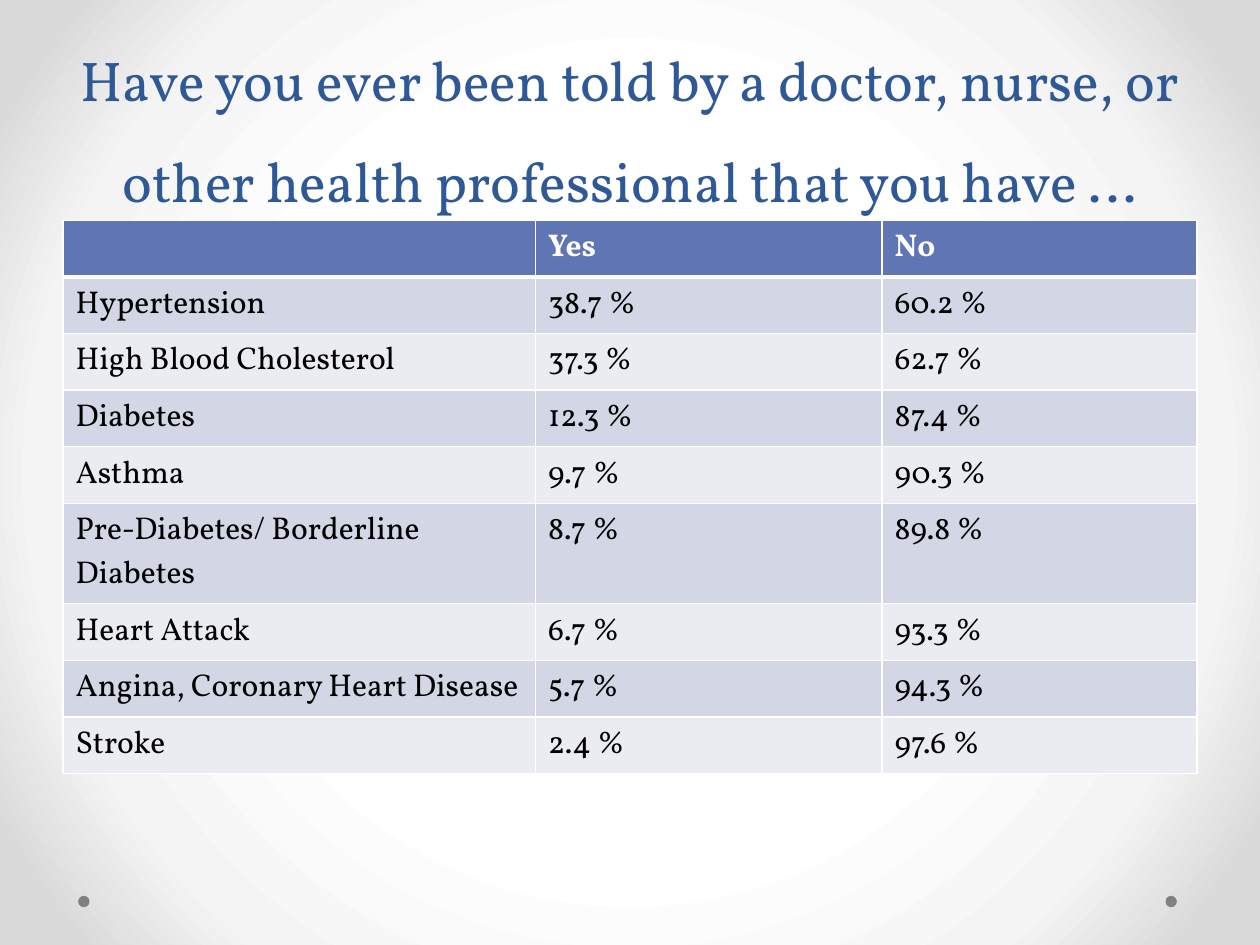
from pptx import Presentation
from pptx.dml.color import RGBColor
from pptx.enum.shapes import MSO_SHAPE
from pptx.enum.text import MSO_ANCHOR, MSO_AUTO_SIZE, PP_ALIGN
from pptx.oxml import parse_xml
from pptx.oxml.ns import nsdecls, qn
from pptx.util import Inches, Pt

FONT = "Vollkorn"
TITLE = ("Have you ever been told by a doctor, nurse, or "
         "other health professional that you have …")
ROWS = [
    ("", "Yes", "No"),
    ("Hypertension", "38.7 %", "60.2 %"),
    ("High Blood Cholesterol", "37.3 %", "62.7 %"),
    ("Diabetes", "12.3 %", "87.4 %"),
    ("Asthma", "9.7 %", "90.3 %"),
    ("Pre-Diabetes/ Borderline Diabetes", "8.7 %", "89.8 %"),
    ("Heart Attack", "6.7 %", "93.3 %"),
    ("Angina, Coronary Heart Disease", "5.7 %", "94.3 %"),
    ("Stroke", "2.4 %", "97.6 %"),
]
WIDTHS = (3.75, 2.75, 2.5)
STOPS = ((50, "FFFFFF"), (76, "F4F4F4"), (92, "DADADA"))


def paint(target, color):
    """Set a solid fill from a hex string."""
    target.solid()
    target.fore_color.rgb = RGBColor.from_string(color)


def write(para, text, size, color, bold=False):
    """Add one styled run to a paragraph."""
    run = para.add_run()
    run.text = text
    font = run.font
    font.name, font.size, font.bold = FONT, Pt(size), bold
    font.color.rgb = RGBColor.from_string(color)


def shade(slide):
    """Give the slide a radial grey background."""
    slide.background.fill.gradient()
    grad = slide.element.find(".//" + qn("a:gradFill"))
    stops = "".join(
        f'<a:gs pos="{pos * 1000}"><a:srgbClr val="{color}"/></a:gs>'
        for pos, color in STOPS)
    grad.getparent().replace(grad, parse_xml(
        f'<a:gradFill {nsdecls("a")} rotWithShape="1"><a:gsLst>{stops}</a:gsLst>'
        '<a:path path="circle"><a:fillToRect l="50000" t="50000" r="50000" '
        'b="50000"/></a:path></a:gradFill>'))


def add_dots(slide, lefts, top, size):
    """Place the grey footer dots."""
    for left in lefts:
        dot = slide.shapes.add_shape(
            MSO_SHAPE.OVAL, Inches(left), Inches(top), Inches(size), Inches(size))
        dot.shadow.inherit = False
        paint(dot.fill, "808080")
        dot.line.fill.background()


def add_title(slide, left, top, width, height):
    """Place and fill the title placeholder."""
    title = slide.shapes.title
    title.left, title.top = Inches(left), Inches(top)
    title.width, title.height = Inches(width), Inches(height)
    frame = title.text_frame
    frame.word_wrap = True
    frame.auto_size = MSO_AUTO_SIZE.NONE
    frame.vertical_anchor = MSO_ANCHOR.BOTTOM
    para = frame.paragraphs[0]
    para.alignment = PP_ALIGN.CENTER
    para.line_spacing = Pt(58)
    write(para, TITLE, 32, "2F5897")


def edge(cell, head):
    """Draw white cell borders, thicker below the header."""
    props = cell._tc.get_or_add_tcPr()
    for side in "LRTB":
        width = Pt(3 if head and side == "B" else 1)
        props.append(parse_xml(
            f'<a:ln{side} {nsdecls("a")} w="{width}"><a:solidFill>'
            f'<a:srgbClr val="FFFFFF"/></a:solidFill></a:ln{side}>'))


def add_grid(slide, left, top, width, height):
    """Place the table of health conditions."""
    table = slide.shapes.add_table(
        len(ROWS), len(WIDTHS), Inches(left), Inches(top),
        Inches(width), Inches(height)).table
    for col, size in zip(table.columns, WIDTHS):
        col.width = Inches(size)
    for i, row in enumerate(ROWS):
        head = i == 0
        table.rows[i].height = Inches(0.41)
        back = "6076B4" if head else ("EAECF2", "D2D6E5")[i % 2]
        for j, text in enumerate(row):
            cell = table.cell(i, j)
            edge(cell, head)
            paint(cell.fill, back)
            if text:
                write(cell.text_frame.paragraphs[0], text, 18,
                      "FFFFFF" if head else "000000", head)


def main():
    """Build and save the slide."""
    deck = Presentation()
    deck.slide_width, deck.slide_height = Inches(10), Inches(7.5)
    slide = deck.slides.add_slide(deck.slide_layouts[5])
    shade(slide)
    add_dots(slide, (9.25, 0.62), 7.11, 0.09)
    add_title(slide, 0.5, 0, 9, 1.75)
    add_grid(slide, 0.5, 1.75, 9, 4.24)
    deck.save("out.pptx")


if __name__ == "__main__":
    main()
